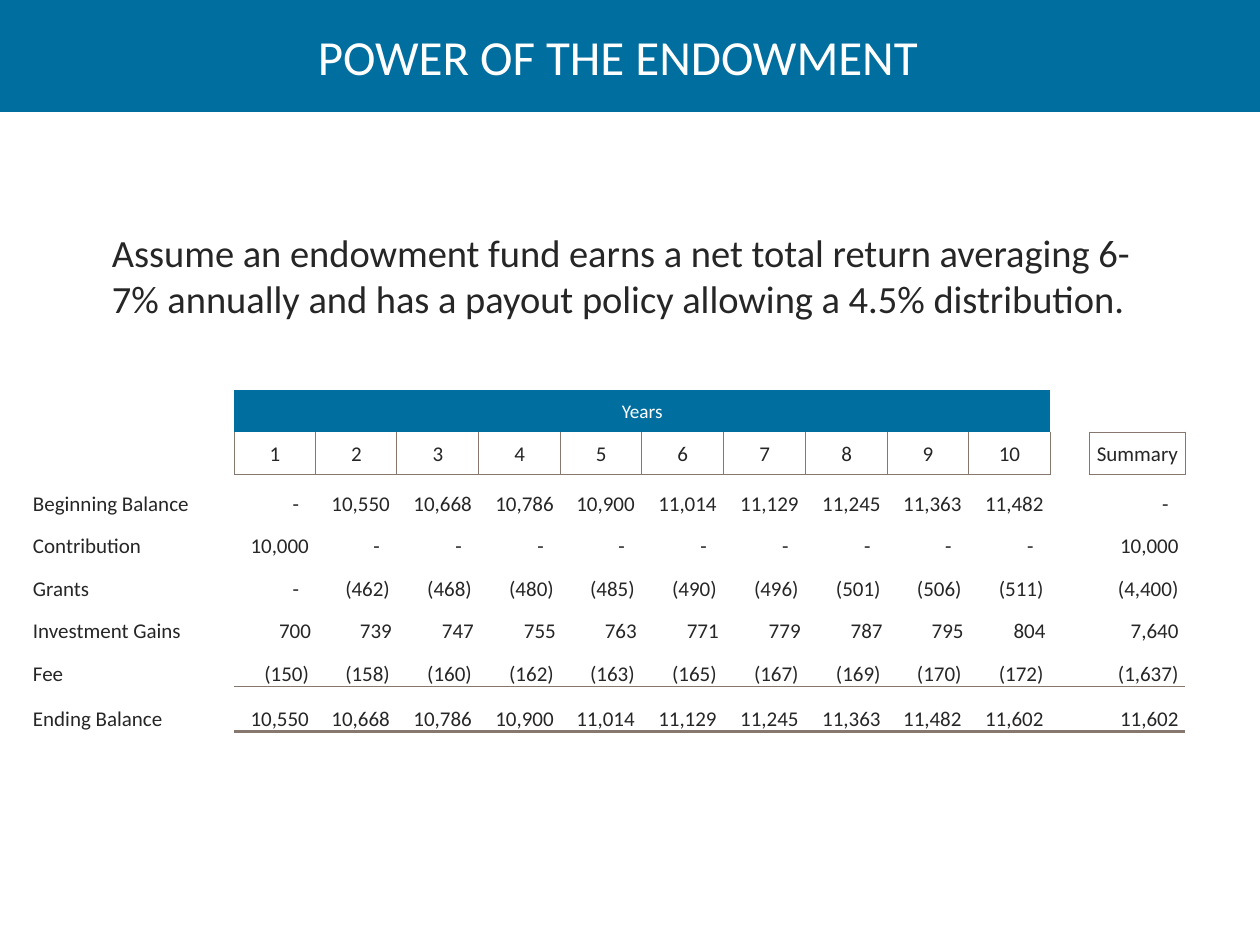
import pptx
import pptx.util
import pptx.dml.color
import pptx.enum.shapes
import pptx.enum.text
from lxml import etree
from pptx.oxml.ns import qn

PX = 914400 // 126
COLORS = {"blue": "006E9F", "ink": "262626", "rule": "86786F", "white": "FFFFFF"}
ALIGN = pptx.enum.text.PP_ALIGN
ANCHOR = pptx.enum.text.MSO_ANCHOR

YEARS = 10
SUMMARY = YEARS + 2
ROW_HEIGHTS = [42, 42, 43, 42, 42, 43, 42, 43, 45, 45]
YEAR_EDGES = [round(i * 817 / YEARS) for i in range(YEARS + 1)]
COL_WIDTHS = [202] + [b - a for a, b in zip(YEAR_EDGES, YEAR_EDGES[1:])] + [39, 96]

# Each row: label, ten yearly values, summary
BALANCES = "10,550 10,668 10,786 10,900 11,014 11,129 11,245 11,363 11,482".split()
ROWS = [
    ("Beginning Balance", ["-"] + BALANCES, "-"),
    ("Contribution", ["10,000"] + ["-"] * 9, "10,000"),
    ("Grants", "- (462) (468) (480) (485) (490) (496) (501) (506) (511)".split(), "(4,400)"),
    ("Investment Gains", "700 739 747 755 763 771 779 787 795 804".split(), "7,640"),
    ("Fee", "(150) (158) (160) (162) (163) (165) (167) (169) (170) (172)".split(), "(1,637)"),
    ("Ending Balance", BALANCES + ["11,602"], "11,602"),
]


def rule_above(row, col):
    """Width in points of the line on top of a cell, 0 for none."""
    if row == 2:
        return 0.5 if col == SUMMARY else 0
    if row == 3:
        return 0.5 if col in range(1, YEARS + 1) or col == SUMMARY else 0
    return {8: 0.5, 9: 2}.get(row, 0) if col >= 1 else 0


def rule_left(row, col):
    """Width in points of the line left of a cell, 0 for none."""
    return 0.5 if row == 2 and col >= 1 else 0


def right_margin(value):
    """Accounting style: dashes sit further in than numbers."""
    if value == "-":
        return 17
    return 5 if len(value) == 3 else 7


class Deck:
    font = "Calibri"

    def __init__(self, width, height):
        self.prs = pptx.Presentation()
        self.prs.slide_width, self.prs.slide_height = width * PX, height * PX
        self.s = self.prs.slides.add_slide(self.prs.slide_layouts[6])

    def color(self, name):
        return pptx.dml.color.RGBColor.from_string(COLORS[name])

    def run(self, p, text, size, color):
        r = p.add_run()
        r.text = text
        r.font.name = self.font
        r.font.size = pptx.util.Pt(size)
        r.font.color.rgb = self.color(color)

    def text(self, x, y, w, h, text, size, color, left=13, top=6):
        sp = self.s.shapes.add_textbox(x * PX, y * PX, w * PX, h * PX)
        tf = sp.text_frame
        tf.word_wrap = True
        tf.margin_left, tf.margin_top = left * PX, top * PX
        self.run(tf.paragraphs[0], text, size, color)

    def rect(self, x, y, w, h, fill):
        sp = self.s.shapes.add_shape(
            pptx.enum.shapes.MSO_SHAPE.RECTANGLE, x * PX, y * PX, w * PX, h * PX)
        sp.shadow.inherit = False
        sp.fill.solid()
        sp.fill.fore_color.rgb = self.color(fill)
        sp.line.fill.background()

    def table(self, x, y, widths, heights):
        frame = self.s.shapes.add_table(
            len(heights), len(widths), x * PX, y * PX, sum(widths) * PX, sum(heights) * PX)
        table = frame.table
        table.first_row = table.horz_banding = False
        for col, w in zip(table.columns, widths):
            col.width = w * PX
        for row, h in zip(table.rows, heights):
            row.height = h * PX
        for r in range(len(heights)):
            for c in range(len(widths)):
                cell = table.cell(r, c)
                cell.margin_left = cell.margin_right = cell.margin_top = PX
                cell.margin_bottom = 0
                self.borders(cell, L=rule_left(r, c), R=rule_left(r, c + 1),
                             T=rule_above(r, c), B=rule_above(r + 1, c))
                cell.fill.background()
                p = cell.text_frame.paragraphs[0]
                etree.SubElement(p._p, qn("a:endParaRPr"), sz="1200")
        return table

    def borders(self, cell, **sides):
        tc_pr = cell._tc.get_or_add_tcPr()
        for side, width in sides.items():
            ln = etree.SubElement(tc_pr, qn("a:ln" + side), w=str(int(width * 12700)))
            if width:
                fill = etree.SubElement(ln, qn("a:solidFill"))
                etree.SubElement(fill, qn("a:srgbClr"), val=COLORS["rule"])
            else:
                etree.SubElement(ln, qn("a:noFill"))

    def cell(self, cell, text, align, anchor, size=12, color="ink", right=1):
        cell.vertical_anchor = anchor
        cell.margin_right = right * PX
        p = cell.text_frame.paragraphs[0]
        p.alignment = align
        self.run(p, text, size, color)


def main():
    deck = Deck(1260, 945)

    # Assumption
    deck.text(84, 168, 1089, 672,
              "Assume an endowment fund earns a net total return averaging 6-7% annually "
              "and has a payout policy allowing a 4.5% distribution.",
              22, "ink", left=28, top=61)

    # Table heading
    table = deck.table(32, 348, COL_WIDTHS, ROW_HEIGHTS)
    years = table.cell(1, 1)
    years.merge(table.cell(1, YEARS))
    years.fill.solid()
    years.fill.fore_color.rgb = deck.color("blue")
    deck.cell(years, "Years", ALIGN.CENTER, ANCHOR.MIDDLE, 11, "white")
    for year in range(1, YEARS + 1):
        deck.cell(table.cell(2, year), str(year), ALIGN.CENTER, ANCHOR.MIDDLE)
    deck.cell(table.cell(2, SUMMARY), "Summary", ALIGN.CENTER, ANCHOR.MIDDLE)

    # Table body
    for row, (label, values, summary) in enumerate(ROWS, 3):
        deck.cell(table.cell(row, 0), label, ALIGN.LEFT, ANCHOR.BOTTOM)
        for col, value in [*enumerate(values, 1), (SUMMARY, summary)]:
            deck.cell(table.cell(row, col), value, ALIGN.RIGHT, ANCHOR.BOTTOM,
                      right=right_margin(value))

    # Title band
    deck.rect(-2, 0, 1262, 112, "blue")
    deck.text(305, 20, 756, 72, "POWER OF THE ENDOWMENT", 28, "white")

    deck.prs.save("out.pptx")


if __name__ == "__main__":
    main()
